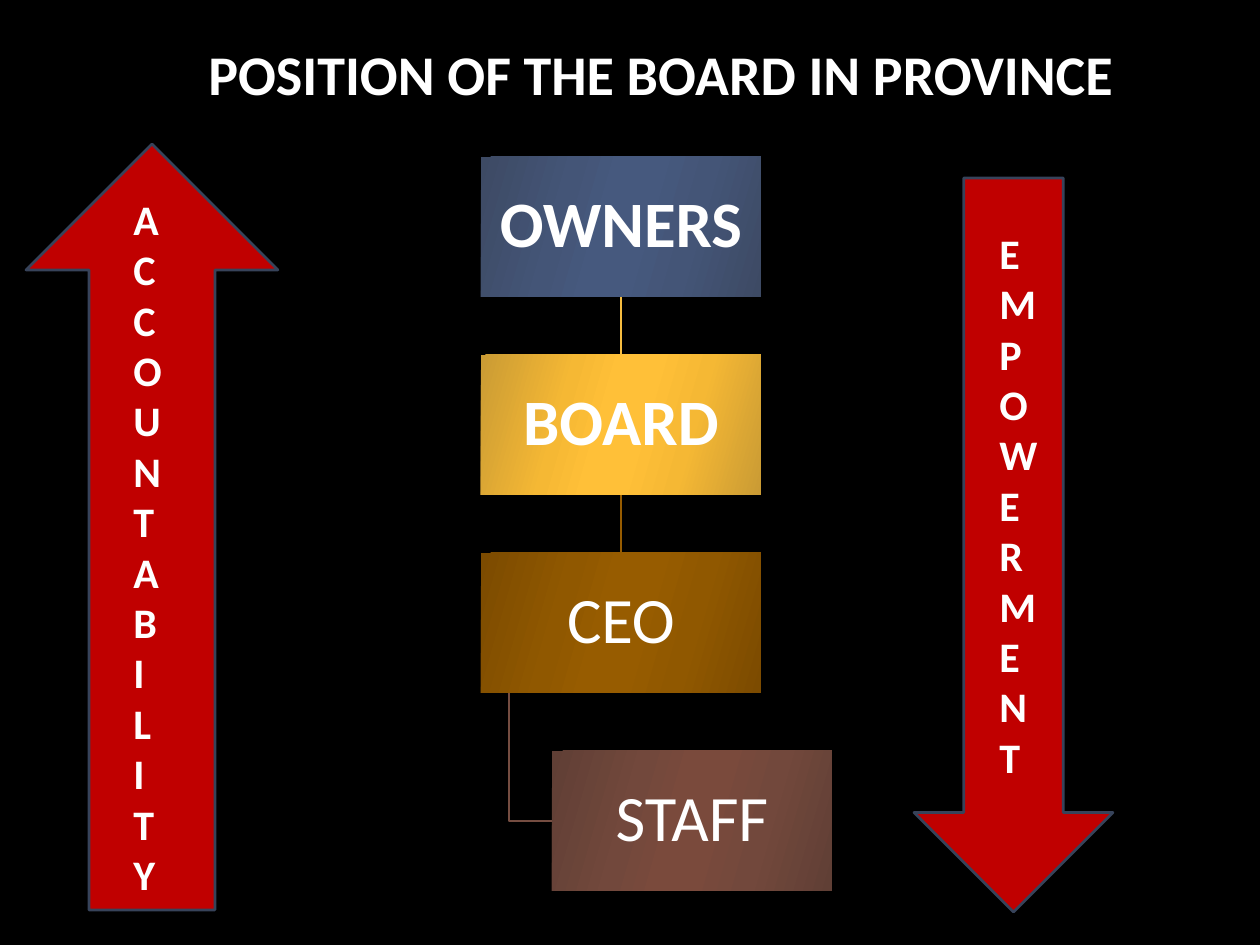
from lxml import etree
from pptx import Presentation
from pptx import util as u
from pptx.dml.color import RGBColor
from pptx.enum import shapes, text
from pptx.oxml import parse_xml
from pptx.oxml.ns import nsdecls, qn

TITLE = "POSITION OF THE BOARD IN PROVINCE"
LEVELS = [
    ("OWNERS", True, 481, ("3D4A64", "445577", "46597E")),
    ("BOARD", True, 481, ("CA9B34", "F5B834", "FFC038")),
    ("CEO", False, 481, ("7C4B00", "905800", "975C00")),
    ("STAFF", False, 552, ("603F35", "72483C", "7A4A3C")),
]
ARROWS = [
    (shapes.MSO_SHAPE.UP_ARROW, (26, 144, 252, 766)),
    (shapes.MSO_SHAPE.DOWN_ARROW, (914, 178, 199, 734)),
]
COLUMNS = [
    (list("ACCOUNTABILITY"), (121, 187, 63, 726)),
    (["E", "M", "P", "O", "W", "ER", "M", "E", "N", "T"], (987, 221, 53, 572)),
]
COLORS = {"back": "000000", "text": "FFFFFF", "arrow": "C00000", "edge": "37435A",
          "links": ("F7BD40", "975C00"), "branch": "754D41"}
FONT = "Calibri"
BOX_W, BOX_H, TOP, PITCH = 280, 140, 157, 198
BRANCH_X = 509


def px(n):
    return u.Emu(round(n * 914400 / 126))


def rgb(value):
    return RGBColor.from_string(value)


def add_run(p, words, size, bold):
    r = p.add_run()
    r.text = words
    r.font.name = FONT
    r.font.size = u.Pt(size)
    r.font.bold = bold
    r.font.color.rgb = rgb(COLORS["text"])


def set_gradient(sp, tones):
    dark, mid, bright = tones
    stops = zip((0, 30, 45, 55, 73, 100), (dark, mid, bright, bright, mid, dark))
    marks = "".join(f'<a:gs pos="{pos * 1000}"><a:srgbClr val="{c}"/></a:gs>' for pos, c in stops)
    sp.fill.gradient()
    old = sp._element.spPr.find(qn("a:gradFill"))
    new = parse_xml(f'<a:gradFill {nsdecls("a")} rotWithShape="1"><a:gsLst>{marks}</a:gsLst>'
                    '<a:lin ang="960000" scaled="0"/></a:gradFill>')
    old.getparent().replace(old, new)


def add_level(s, y, name, bold, x, tones):
    sp = s.shapes.add_shape(shapes.MSO_SHAPE.RECTANGLE, px(x), px(y), px(BOX_W), px(BOX_H))
    sp.shadow.inherit = False
    set_gradient(sp, tones)
    sp.line.fill.background()
    tf = sp.text_frame
    tf.margin_left = tf.margin_right = tf.margin_top = tf.margin_bottom = px(4)
    tf.vertical_anchor = text.MSO_ANCHOR.MIDDLE
    p = tf.paragraphs[0]
    p.alignment = text.PP_ALIGN.CENTER
    p.line_spacing = 0.9
    add_run(p, name, 37, bold)
    return sp


def add_link(s, upper, lower, color):
    link = s.shapes.add_connector(shapes.MSO_CONNECTOR.STRAIGHT, 0, 0, 0, 0)
    link.begin_connect(upper, 2)
    link.end_connect(lower, 0)
    link.line.color.rgb = rgb(color)
    link.line.width = u.Pt(1.5)
    etree.SubElement(link._element.spPr, qn("a:effectLst"))


def add_branch(s, ceo, staff):
    middle = staff.top + staff.height // 2
    builder = s.shapes.build_freeform(px(BRANCH_X), ceo.top + ceo.height)
    builder.add_line_segments([(px(BRANCH_X), middle), (staff.left, middle)], close=False)
    sp = builder.convert_to_shape()
    sp.shadow.inherit = False
    sp.fill.background()
    sp.line.color.rgb = rgb(COLORS["branch"])
    sp.line.width = u.Pt(1.5)


def add_text(s, lines, area, size, align):
    tf = s.shapes.add_textbox(*map(px, area)).text_frame
    tf.word_wrap = True
    for i, line in enumerate(lines):
        p = tf.add_paragraph() if i else tf.paragraphs[0]
        p.alignment = align
        add_run(p, line, size, True)


def add_arrow(s, kind, area):
    sp = s.shapes.add_shape(kind, *map(px, area))
    sp.shadow.inherit = False
    sp.fill.solid()
    sp.fill.fore_color.rgb = rgb(COLORS["arrow"])
    sp.line.color.rgb = rgb(COLORS["edge"])
    sp.line.width = u.Pt(1.5)


def main():
    prs = Presentation()
    prs.slide_width, prs.slide_height = px(1260), px(945)
    s = prs.slides.add_slide(prs.slide_layouts[6])
    s.background.fill.solid()
    s.background.fill.fore_color.rgb = rgb(COLORS["back"])

    boxes = [add_level(s, TOP + i * PITCH, *level) for i, level in enumerate(LEVELS)]
    for upper, lower, color in zip(boxes, boxes[1:], COLORS["links"]):
        add_link(s, upper, lower, color)
    add_branch(s, *boxes[-2:])

    add_text(s, [TITLE], (73, 33, 1176, 118), 32, text.PP_ALIGN.CENTER)
    for kind, area in ARROWS:
        add_arrow(s, kind, area)
    for letters, area in COLUMNS:
        add_text(s, letters, area, 24, text.PP_ALIGN.LEFT)
    prs.save("out.pptx")


if __name__ == "__main__":
    main()
